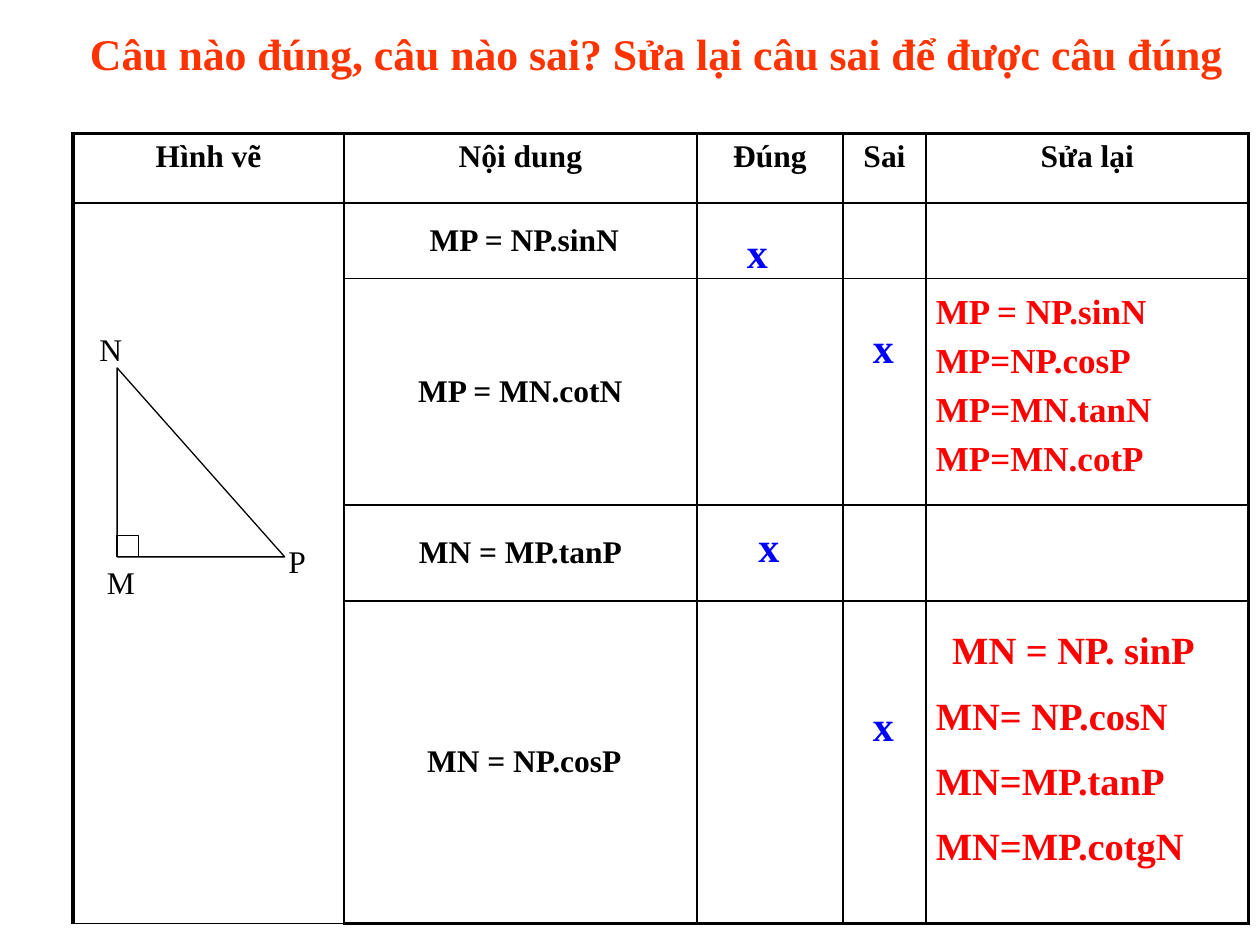
from lxml import etree
from pptx import Presentation
from pptx import util as u
from pptx.dml import color
from pptx.enum import shapes, text
from pptx.oxml import ns

COLORS = {"title": "FF3300", "ink": "000000", "mark": "0000FF", "fix": "FF0000"}
FONT = "Times New Roman"
COLUMNS = [2.15, 2.8, 1.16, 0.66, 2.56]
ROWS = [0.55, 0.6, 1.8, 0.76, 2.56]
HEADERS = ["Hình vẽ", "Nội dung", "Đúng", "Sai", "Sửa lại"]
STATEMENTS = [" MP = NP.sinN", "MP = MN.cotN", "MN = MP.tanP", " MN = NP.cosP"]
VERTICES = {"M": (0.75, 4.42), "N": (0.69, 2.57), "P": (2.19, 4.25)}
MARKS = [(5.83, 1.75), (6.83, 2.5), (5.92, 4.08), (6.83, 5.5)]
COT_FIXES = ["MP = NP.sinN", "MP=NP.cosP", "MP=MN.tanN", "MP=MN.cotP"]
COS_FIXES = ["MN = NP. sinP", "MN= NP.cosN", "MN=MP.tanP", "MN=MP.cotgN"]
CENTER = text.PP_ALIGN.CENTER


def rgb(name):
    """Return the named colour."""
    return color.RGBColor.from_string(COLORS[name])


def inches(*lengths):
    """Convert numbers to lengths."""
    return [u.Inches(length) for length in lengths]


def write(frame, lines, size, ink, bold=True, align=None, gap=0):
    """Fill a text frame with evenly spaced paragraphs."""
    frame.word_wrap = True
    for index, line in enumerate(lines):
        para = frame.add_paragraph() if index else frame.paragraphs[0]
        para.alignment = align
        para.space_before = u.Pt(gap if index else 0)
        span = para.add_run()
        span.text = line
        for key, value in {"name": FONT, "size": u.Pt(size), "bold": bold}.items():
            setattr(span.font, key, value)
        span.font.color.rgb = rgb(ink)


def add_text(holder, place, lines, size, ink, **style):
    """Add a text box."""
    box = holder.shapes.add_textbox(*inches(*place))
    write(box.text_frame, lines, size, ink, **style)
    return box


def add_title(page):
    """Place and format the title."""
    box = page.shapes.title
    box.left, box.top, box.width, box.height = inches(0.33, 0.16, 9.67, 0.52)
    frame = box.text_frame
    frame.vertical_anchor = text.MSO_ANCHOR.TOP
    frame.auto_size = text.MSO_AUTO_SIZE.NONE
    write(frame, [" Câu nào đúng, câu nào sai? Sửa lại câu sai để được câu đúng"],
          25, "title", align=CENTER)


def style_cell(cell, row, column):
    """Rule a cell, thicker on the table's outer edge, and clear its fill."""
    outer = {"L": column == 0, "R": column == len(COLUMNS) - 1,
             "T": row == 0, "B": row == len(ROWS) - 1}
    props = cell._tc.get_or_add_tcPr()
    for side, thick in outer.items():
        line = etree.SubElement(props, ns.qn("a:ln" + side), w=str(u.Pt(2.25 if thick else 1)))
        fill = etree.SubElement(line, ns.qn("a:solidFill"))
        etree.SubElement(fill, ns.qn("a:srgbClr"), val=COLORS["ink"])
    cell.fill.background()


def add_grid(page):
    """Add the table of statements."""
    place = inches(0.58, 1.06, sum(COLUMNS), sum(ROWS))
    table = page.shapes.add_table(len(ROWS), len(COLUMNS), *place).table
    table.first_row = table.horz_banding = False
    for column, width in enumerate(COLUMNS):
        table.columns[column].width = u.Inches(width)
    for row, height in enumerate(ROWS):
        table.rows[row].height = u.Inches(height)
        for column in range(len(COLUMNS)):
            style_cell(table.cell(row, column), row, column)
    table.cell(1, 0).merge(table.cell(len(ROWS) - 1, 0))
    for column, header in enumerate(HEADERS):
        write(table.cell(0, column).text_frame, [header], 18, "ink", align=CENTER)
    for row, statement in enumerate(STATEMENTS, 1):
        cell = table.cell(row, 1)
        cell.vertical_anchor = text.MSO_ANCHOR.MIDDLE
        write(cell.text_frame, [statement], 18, "ink", align=CENTER)


def add_outline(holder, kind, place):
    """Add an unfilled shape with a thin line."""
    shape = holder.shapes.add_shape(kind, *inches(*place))
    shape.shadow.inherit = False
    shape.fill.background()
    shape.line.color.rgb = rgb("ink")
    shape.line.width = u.Pt(0.75)


def add_triangle(page):
    """Draw the right triangle with its labelled vertices."""
    group = page.shapes.add_group_shape()
    add_outline(group, shapes.MSO_SHAPE.RIGHT_TRIANGLE, (0.93, 2.92, 1.33, 1.5))
    add_outline(group, shapes.MSO_SHAPE.RECTANGLE, (0.93, 4.25, 0.17, 0.17))
    for name, corner in VERTICES.items():
        add_text(group, (*corner, 0.58, 0.4), [name], 18, "ink", bold=False)


def main():
    """Build the slide."""
    deck = Presentation()
    deck.slide_width, deck.slide_height = inches(10, 7.5)
    page = deck.slides.add_slide(deck.slide_layouts[5])
    add_title(page)
    add_grid(page)
    add_triangle(page)
    for corner in MARKS:
        add_text(page, (*corner, 0.42, 0.5), ["x"], 24, "mark")
    box = add_text(page, (7.33, 4.92, 2.38, 2.14), COS_FIXES, 22, "fix", gap=11)
    box.text_frame.paragraphs[0].alignment = CENTER
    add_text(page, (7.33, 2.25, 2.5, 1.65), COT_FIXES, 20, "fix", gap=4)
    deck.save("out.pptx")


if __name__ == "__main__":
    main()
